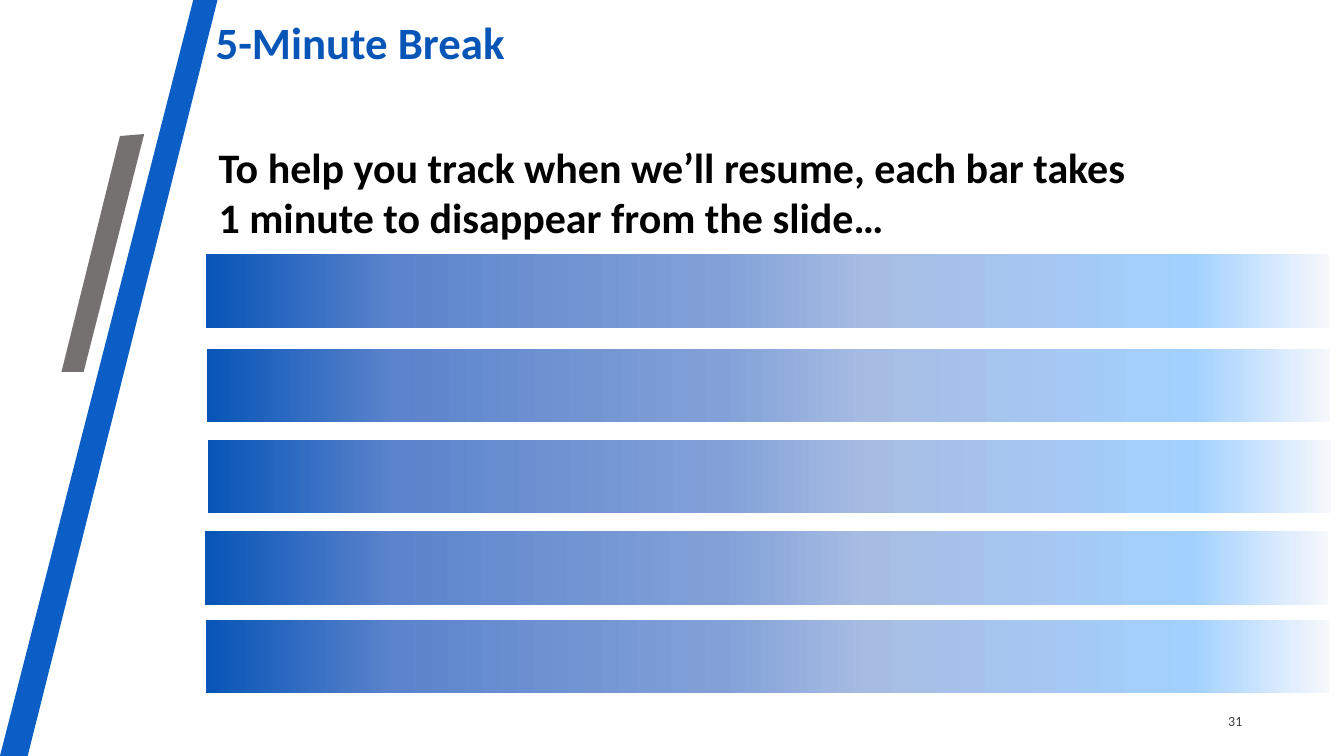
from dataclasses import dataclass

from lxml import etree
from pptx import Presentation
from pptx.dml.color import RGBColor
from pptx.enum.shapes import MSO_SHAPE
from pptx.enum.text import MSO_ANCHOR, PP_ALIGN
from pptx.oxml.ns import qn
from pptx.util import Inches, Pt

RECTANGLE = MSO_SHAPE.RECTANGLE
TOP, MIDDLE = MSO_ANCHOR.TOP, MSO_ANCHOR.MIDDLE
LEFT, RIGHT = PP_ALIGN.LEFT, PP_ALIGN.RIGHT


@dataclass(frozen=True)
class Theme:
    font: str = "Calibri"
    stripe: str = "0A5EC6"
    accent: str = "767171"
    title: str = "0755B7"
    body: str = "000000"
    number: str = "404040"
    title_size: int = 32
    body_size: int = 30
    number_size: int = 10
    bar_stops: tuple = (
        (0, "F6F8FC"), (12, "A3D1FF"), (41, "A7BCE3"),
        (54, "82A1D8"), (83, "5C84CC"), (100, "0755B7"),
    )


class SlideBuilder:
    def __init__(self, page, theme):
        self.page = page
        self.theme = theme

    def outline(self, points, color):
        corners = [(Inches(x), Inches(y)) for x, y in points]
        builder = self.page.shapes.build_freeform(*corners[0], scale=1.0)
        builder.add_line_segments(corners[1:], close=True)
        shape = builder.convert_to_shape()
        shape.shadow.inherit = False
        shape.fill.solid()
        shape.fill.fore_color.rgb = RGBColor.from_string(color)
        shape.line.fill.background()

    def text(self, words, area, size, color, bold=False, anchor=TOP, align=LEFT, spacing=1.0):
        box = self.page.shapes.add_textbox(*map(Inches, area))
        box.text_frame.word_wrap = True
        box.text_frame.vertical_anchor = anchor
        para = box.text_frame.paragraphs[0]
        para.alignment = align
        para.line_spacing = spacing
        span = para.add_run()
        span.text = words
        span.font.name = self.theme.font
        span.font.size = Pt(size)
        span.font.bold = bold
        span.font.color.rgb = RGBColor.from_string(color)

    def gradient_bar(self, left, top, width, height):
        bar = self.page.shapes.add_shape(RECTANGLE, *map(Inches, (left, top, width, height)))
        bar.rotation = 180
        bar.shadow.inherit = False
        bar.line.fill.background()
        bar.fill.gradient()
        bar.fill.gradient_angle = 0
        stops = bar.element.spPr.find(qn("a:gradFill")).find(qn("a:gsLst"))
        for stop in list(stops):
            stops.remove(stop)
        for percent, color in self.theme.bar_stops:
            stop = etree.SubElement(stops, qn("a:gs"), pos=str(percent * 1000))
            etree.SubElement(stop, qn("a:srgbClr"), val=color)


def main():
    deck = Presentation()
    deck.slide_width, deck.slide_height = Inches(13.33), Inches(7.5)
    page = deck.slides.add_slide(deck.slide_layouts[6])
    theme = Theme()
    slide = SlideBuilder(page, theme)

    slide.outline([(1.92, -0.01), (2.16, -0.01), (0.27, 7.52), (0, 7.5)], theme.stripe)
    slide.text("31", (9.42, 6.95, 3, 0.4), theme.number_size, theme.number,
               anchor=MIDDLE, align=RIGHT)
    slide.outline([(1.19, 1.35), (1.43, 1.33), (0.83, 3.69), (0.61, 3.69)], theme.accent)
    slide.text("5-Minute Break", (2.04, -0.11, 10.76, 1.12), theme.title_size, theme.title,
               bold=True, anchor=MIDDLE, spacing=0.9)
    slide.text("To help you track when we’ll resume, each bar takes 1 minute to disappear from the slide…",
               (2.07, 1.35, 9.47, 1.11), theme.body_size, theme.body, bold=True)

    bar_corners = [(2.04, 2.52), (2.05, 3.46), (2.06, 4.36), (2.03, 5.27), (2.04, 6.15)]
    for left, top in bar_corners:
        slide.gradient_bar(left, top, 11.14, 0.73)

    deck.save("out.pptx")


if __name__ == "__main__":
    main()
